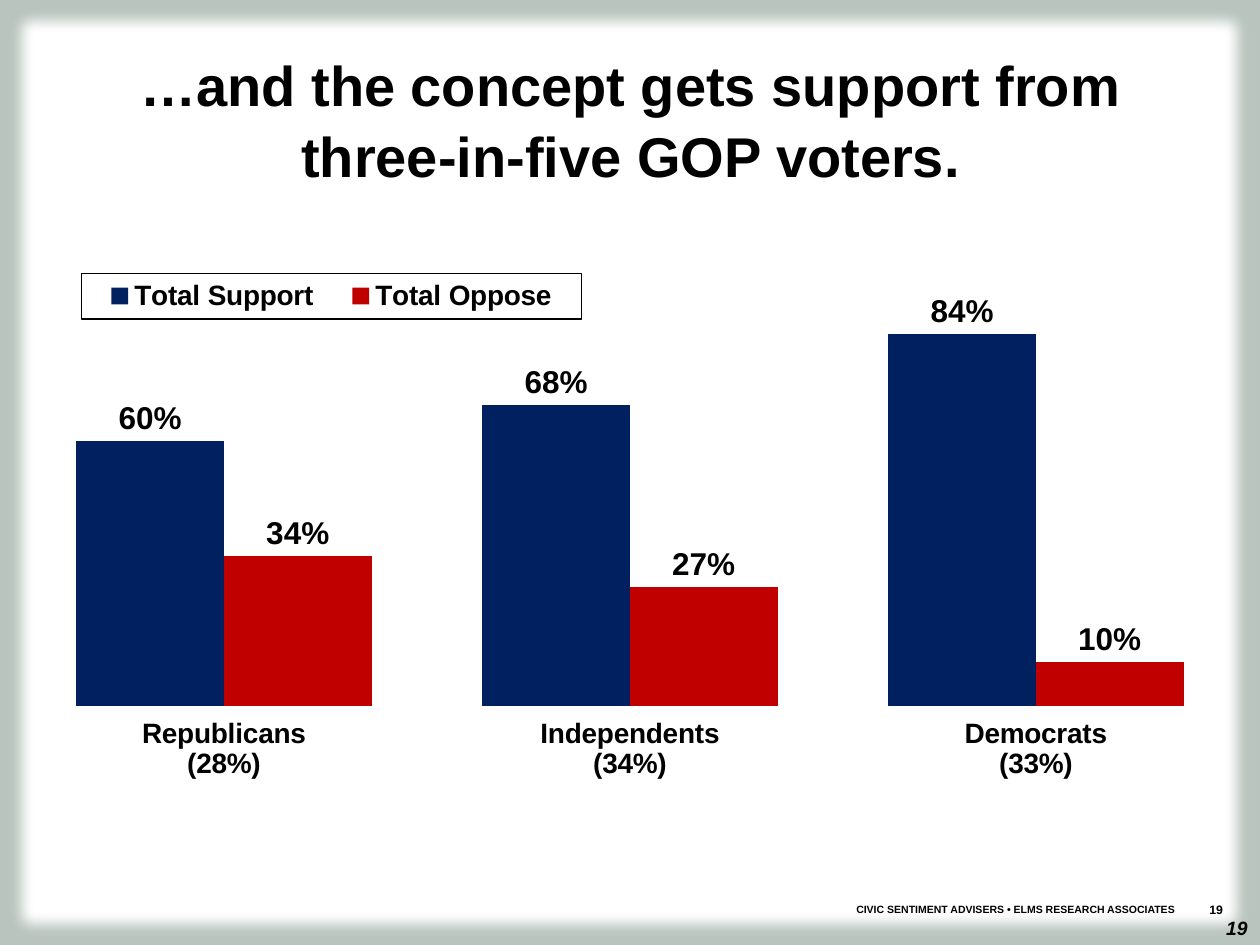
from dataclasses import dataclass

from lxml import etree
from pptx import Presentation
from pptx.chart.data import CategoryChartData
from pptx.dml.color import RGBColor
from pptx.enum.chart import XL_CHART_TYPE as ChartType
from pptx.enum.chart import XL_LABEL_POSITION as LabelPos
from pptx.enum.chart import XL_LEGEND_POSITION as LegendPos
from pptx.enum.chart import XL_TICK_LABEL_POSITION as TickLabels
from pptx.enum.chart import XL_TICK_MARK as TickMark
from pptx.enum.shapes import MSO_SHAPE as Shape
from pptx.enum.text import MSO_ANCHOR as Anchor
from pptx.enum.text import MSO_AUTO_SIZE as AutoSize
from pptx.enum.text import PP_ALIGN as Align
from pptx.oxml import parse_xml
from pptx.oxml.ns import nsdecls, qn
from pptx.util import Emu, Pt

FONT = "Arial"
COLORS = {
    "background": "B9C4BE",
    "panel": "FFFFFF",
    "panel_edge": "4C5B53",
    "text": "000000",
    "support": "002060",
    "oppose": "C00000",
}


@dataclass
class Box:
    left: int
    top: int
    width: int
    height: int

    def emu(self) -> tuple:
        return tuple(px(v) for v in (self.left, self.top, self.width, self.height))


@dataclass
class Label:
    text: str
    box: Box
    size: int
    align: Align
    italic: bool = False


@dataclass
class Series:
    name: str
    values: tuple
    color: str


def px(n: int) -> Emu:
    return Emu(round(n * 914400 / 126))


def rgb(name: str) -> RGBColor:
    return RGBColor.from_string(COLORS[name])


def style_font(font, size: int, italic: bool = False) -> None:
    font.name, font.size = FONT, Pt(size)
    font.bold, font.italic = True, italic
    font.color.rgb = rgb("text")


def add_label(slide, label: Label) -> None:
    tf = slide.shapes.add_textbox(*label.box.emu()).text_frame
    tf.word_wrap = True
    tf.text = label.text
    p = tf.paragraphs[0]
    p.alignment = label.align
    style_font(p.runs[0].font, label.size, label.italic)


def set_layout(parent, x: float, y: float, w: float, h: float, inner: bool = False):
    """Build a manual layout, in fractions of the chart, for a chart part."""
    for old in parent.findall(qn("c:layout")):
        parent.remove(old)
    layout = etree.Element(qn("c:layout"))
    manual = etree.SubElement(layout, qn("c:manualLayout"))
    parts = [("layoutTarget", "inner")] if inner else []
    parts += [("xMode", "edge"), ("yMode", "edge"), ("x", x), ("y", y), ("w", w), ("h", h)]
    for tag, value in parts:
        etree.SubElement(manual, qn(f"c:{tag}")).set("val", str(value))
    return layout


def add_support_chart(slide, box: Box, categories: list, series: list) -> None:
    data = CategoryChartData(number_format="0%")
    data.categories = categories
    for s in series:
        data.add_series(s.name, s.values)
    chart = slide.shapes.add_chart(ChartType.COLUMN_CLUSTERED, *box.emu(), data).chart
    chart.has_title = False
    style_font(chart.font, 18)

    # Axes
    cat = chart.category_axis
    cat.major_tick_mark = TickMark.NONE
    cat.tick_label_position = TickLabels.LOW
    cat.format.line.fill.background()
    style_font(cat.tick_labels.font, 16)
    val = chart.value_axis
    val.minimum_scale, val.maximum_scale, val.major_unit = 0, 1, 0.2
    val.has_major_gridlines = False
    val.visible = False

    # Columns and their labels
    plot = chart.plots[0]
    plot.gap_width, plot.overlap = 75, 0
    plot.vary_by_categories = False
    for s, column in zip(series, plot.series):
        column.format.fill.solid()
        column.format.fill.fore_color.rgb = rgb(s.color)
        labels = column.data_labels
        labels.show_value = True
        labels.position = LabelPos.OUTSIDE_END
        labels.number_format, labels.number_format_is_linked = "0%", False
        style_font(labels.font, 18)
    area = chart._chartSpace.chart.plotArea
    area.insert(0, set_layout(area, 0, 0.05, 1, 0.68, inner=True))

    # Boxed legend
    chart.has_legend = True
    legend = chart.legend
    legend.position = LegendPos.BOTTOM
    legend.include_in_layout = False
    style_font(legend.font, 16)
    el = legend._element
    el.find(qn("c:legendPos")).addnext(set_layout(el, 0.05, 0.065, 0.41, 0.07))
    el.find(qn("c:txPr")).addprevious(parse_xml(
        f'<c:spPr {nsdecls("c", "a")}><a:ln w="9525"><a:solidFill>'
        f'<a:srgbClr val="{COLORS["text"]}"/></a:solidFill></a:ln></c:spPr>'))


def add_panel(slide, box: Box) -> None:
    sp = slide.shapes.add_shape(Shape.RECTANGLE, *box.emu())
    sp.fill.solid()
    sp.fill.fore_color.rgb = rgb("panel")
    sp.line.color.rgb = rgb("panel_edge")
    sp.line.width = Pt(1.5)
    sp._element.spPr.append(parse_xml(
        f'<a:effectLst {nsdecls("a")}><a:softEdge rad="112500"/></a:effectLst>'))
    slide.shapes._spTree.insert(2, sp._element)  # behind the title


def set_title(slide, text: str, box: Box) -> None:
    title = slide.shapes.title
    title.left, title.top, title.width, title.height = box.emu()
    tf = title.text_frame
    tf.margin_left = tf.margin_top = tf.margin_right = tf.margin_bottom = 0
    tf.word_wrap, tf.auto_size = True, AutoSize.NONE
    tf.vertical_anchor = Anchor.MIDDLE
    tf.text = text
    p = tf.paragraphs[0]
    p.alignment, p.line_spacing = Align.CENTER, 1.05
    style_font(p.runs[0].font, 32)


CATEGORIES = ["Republicans\n(28%)", "Independents\n(34%)", "Democrats\n(33%)"]
SERIES = [
    Series("Total Support", (0.60, 0.68, 0.84), "support"),
    Series("Total Oppose", (0.34, 0.27, 0.10), "oppose"),
]
FOOTER = [
    Label("19", Box(1100, 910, 160, 35), 11, Align.RIGHT, italic=True),
    Label("CIVIC SENTIMENT ADVISERS • ELMS RESEARCH ASSOCIATES",
          Box(746, 897, 441, 25), 6, Align.RIGHT),
    Label("19", Box(1197, 896, 63, 28), 7, Align.LEFT),
]


def main() -> None:
    prs = Presentation()
    prs.slide_width, prs.slide_height = px(1260), px(945)
    slide = prs.slides.add_slide(prs.slide_layouts[5])
    slide.background.fill.solid()
    slide.background.fill.fore_color.rgb = rgb("background")

    add_panel(slide, Box(5, 4, 1250, 938))
    set_title(slide, "…and the concept gets support from three-in-five GOP voters.",
              Box(65, 50, 1132, 136))
    add_support_chart(slide, Box(21, 231, 1218, 651), CATEGORIES, SERIES)
    for label in FOOTER:
        add_label(slide, label)
    prs.save("out.pptx")


if __name__ == "__main__":
    main()
